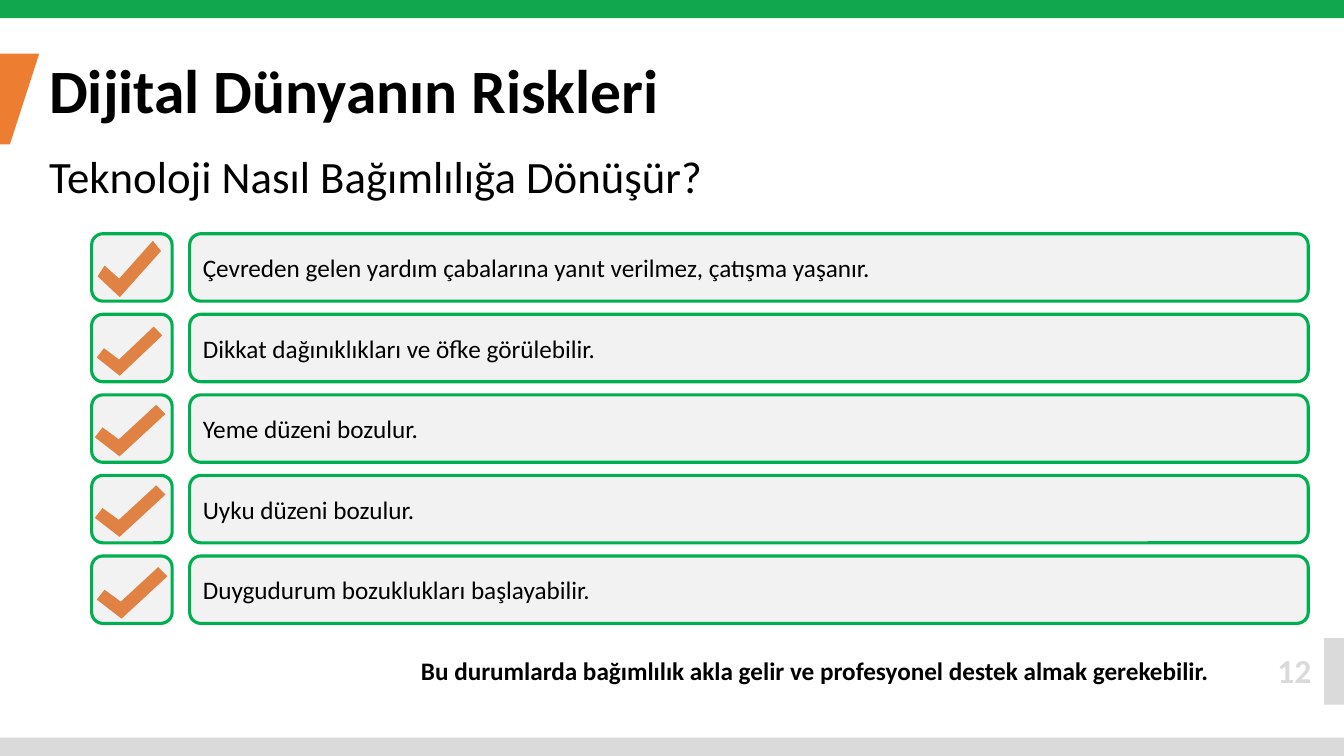
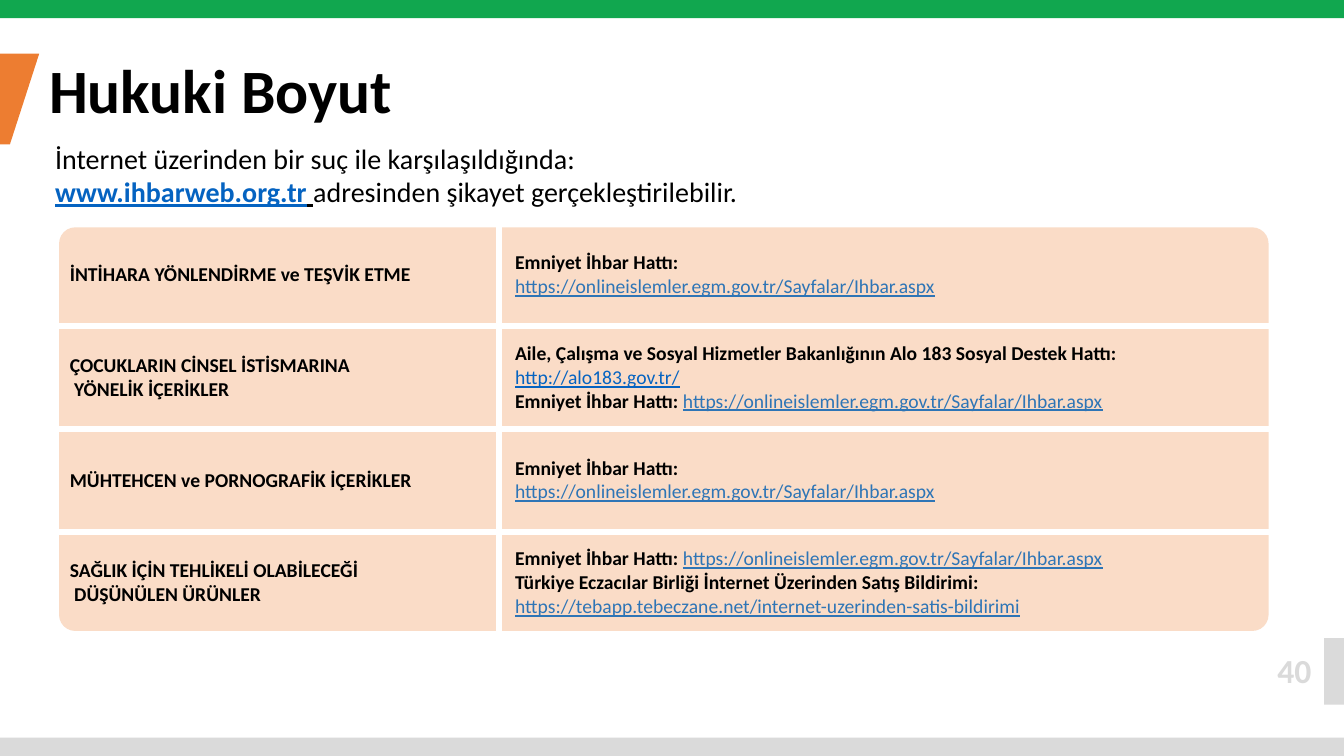
"""Build two slides on digital risks and their legal side."""
import lxml.etree
import pptx
import pptx.dml.color
import pptx.enum.shapes
import pptx.enum.text
import pptx.oxml.ns
import pptx.util

Cm = pptx.util.Cm
Pt = pptx.util.Pt
RGBColor = pptx.dml.color.RGBColor
Shape = pptx.enum.shapes.MSO_SHAPE
Align = pptx.enum.text.PP_ALIGN
Anchor = pptx.enum.text.MSO_ANCHOR
qn = pptx.oxml.ns.qn

BLACK = RGBColor(0x00, 0x00, 0x00)
WHITE = RGBColor(0xFF, 0xFF, 0xFF)
GREEN = RGBColor(0x11, 0xA7, 0x4F)
OUTLINE = RGBColor(0x00, 0xB0, 0x50)
GREY = RGBColor(0xDA, 0xDA, 0xDA)
PALE = RGBColor(0xF2, 0xF2, 0xF2)
ORANGE = RGBColor(0xED, 0x7D, 0x31)
TICK = RGBColor(0xDF, 0x82, 0x44)
PEACH = RGBColor(0xFA, 0xDC, 0xC7)
LINK = RGBColor(0x05, 0x63, 0xC1)
SOFT_LINK = RGBColor(0x2E, 0x75, 0xB6)

FONT = "Calibri"
WIDTH, HEIGHT = 33.87, 19.05
BAND = 0.46
NO_GRID_STYLE = "{2D5ABB26-0587-4C30-8999-92F81FD0307C}"

PLAIN = (BLACK, {})
BOLD = (BLACK, {"bold": True})
BOLD_LINE = (BLACK, {"bold": True, "underline": True})
BOLD_LINK = (LINK, {"bold": True, "underline": True})
STRONG_LINK = (LINK, {"underline": True})
URL = (SOFT_LINK, {"underline": True})
NUMBER = (GREY, {"bold": True})

WEDGE = [(0, 1.35), (0.99, 1.35), (0.25, 3.64), (0, 3.64)]
TICK_OUTLINE = [(0.87, 0), (0.34, 0.67), (0.11, 0.44), (0, 0.63), (0.35, 1), (1, 0.18)]

SIGNS = [
    ("Çevreden gelen yardım çabalarına yanıt verilmez, çatışma yaşanır.", (2.46, 0.18, 1.6, 1.42)),
    ("Dikkat dağınıklıkları ve öfke görülebilir.", (2.44, 0.31, 1.65, 1.24)),
    ("Yeme düzeni bozulur.", (2.39, 0.25, 1.78, 1.3)),
    ("Uyku düzeni bozulur.", (2.39, 0.25, 1.78, 1.3)),
    ("Duygudurum bozuklukları başlayabilir.", (2.44, 0.28, 1.78, 1.3)),
]

POLICE = ("Emniyet İhbar Hattı: ", BOLD)
POLICE_URL = ("https://onlineislemler.egm.gov.tr/Sayfalar/Ihbar.aspx", URL)
POLICE_LINES = [[POLICE], [POLICE_URL]]
REPORTS = [
    (["İNTİHARA YÖNLENDİRME ve TEŞVİK ETME"], POLICE_LINES),
    (
        ["ÇOCUKLARIN CİNSEL İSTİSMARINA", "YÖNELİK İÇERİKLER"],
        [
            [("Aile, Çalışma ve Sosyal Hizmetler Bakanlığının Alo 183 Sosyal Destek Hattı:", BOLD)],
            [("http://alo183.gov.tr/", STRONG_LINK)],
            [POLICE, POLICE_URL],
        ],
    ),
    (["MÜHTEHCEN ve PORNOGRAFİK İÇERİKLER"], POLICE_LINES),
    (
        ["SAĞLIK İÇİN TEHLİKELİ OLABİLECEĞİ", "DÜŞÜNÜLEN ÜRÜNLER"],
        [
            [POLICE, POLICE_URL],
            [("Türkiye Eczacılar Birliği İnternet Üzerinden Satış Bildirimi:", BOLD)],
            [("https://tebapp.tebeczane.net/internet-uzerinden-satis-bildirimi", URL)],
        ],
    ),
]


def apply(target, values):
    """Set each named attribute on the target."""
    for name, value in values.items():
        setattr(target, name, value)


def write(frame, lines, size, align=Align.LEFT):
    """Fill a text frame with one paragraph per line of styled spans."""
    for index, line in enumerate(lines):
        para = frame.add_paragraph() if index else frame.paragraphs[0]
        para.alignment = align
        for text, (color, values) in line:
            span = para.add_run()
            span.text = text
            apply(span.font, {"name": FONT, "size": Pt(size), **values})
            span.font.color.rgb = color


def add_text(page, place, lines, size, align=Align.LEFT):
    """Add a wrapping text box."""
    box = page.shapes.add_textbox(*map(Cm, place))
    box.text_frame.word_wrap = True
    write(box.text_frame, lines, size, align)


def paint(shape, fill, line=None):
    """Give a shape a flat fill and an optional outline."""
    shape.shadow.inherit = False
    shape.fill.solid()
    shape.fill.fore_color.rgb = fill
    if line is None:
        shape.line.fill.background()
    else:
        shape.line.color.rgb = line
        shape.line.width = Pt(2.25)


def add_block(page, kind, place, fill, line=None):
    """Add a painted preset shape."""
    block = page.shapes.add_shape(kind, *map(Cm, place))
    paint(block, fill, line)
    return block


def add_outline(page, points, fill):
    """Add a closed painted polygon."""
    corners = [(Cm(x), Cm(y)) for x, y in points]
    builder = page.shapes.build_freeform(*corners[0])
    builder.add_line_segments(corners[1:], close=True)
    paint(builder.convert_to_shape(), fill)


def add_page(deck, title, number):
    """Add a slide with the shared bands, title and number."""
    page = deck.slides.add_slide(deck.slide_layouts[6])
    add_block(page, Shape.RECTANGLE, (0, 0, WIDTH, BAND), GREEN)
    add_block(page, Shape.RECTANGLE, (0, HEIGHT - BAND, WIDTH, BAND), GREY)
    add_block(page, Shape.RECTANGLE, (WIDTH - 0.5, 16.08, 0.5, 1.68), GREY)
    add_outline(page, WEDGE, ORANGE)
    add_text(page, (0.99, 1.19, 26.39, 2.13), [[(title, BOLD)]], 44)
    add_text(page, (31.78, 16.26, 1.52, 1.27), [[(number, NUMBER)]], 24, Align.RIGHT)
    return page


def add_sign(page, top, text, tick):
    """Add one ticked row."""
    add_block(page, Shape.ROUNDED_RECTANGLE, (2.31, top, 2.03, 1.7), PALE, OUTLINE)
    bar = add_block(page, Shape.ROUNDED_RECTANGLE, (4.78, top, 28.19, 1.7), PALE, OUTLINE)
    bar.text_frame.vertical_anchor = Anchor.MIDDLE
    bar.text_frame.word_wrap = True
    write(bar.text_frame, [[(text, PLAIN)]], 18)
    left, drop, width, height = tick
    points = [(left + x * width, top + drop + y * height) for x, y in TICK_OUTLINE]
    add_outline(page, points, TICK)


def add_border(cell, side):
    """Draw a white rule on one side of a cell."""
    properties = cell._tc.get_or_add_tcPr()
    rule = lxml.etree.SubElement(properties, qn(f"a:{side}"), w=str(Pt(4.95)))
    fill = lxml.etree.SubElement(rule, qn("a:solidFill"))
    lxml.etree.SubElement(fill, qn("a:srgbClr"), val=str(WHITE))


def fill_cell(cell, lines, sides, margin):
    """Write a clear table cell and rule its inner sides."""
    for side in sides:
        add_border(cell, side)
    cell.fill.background()
    apply(cell, {"vertical_anchor": Anchor.MIDDLE, "margin_left": Cm(margin),
                 "margin_right": Cm(0.1), "margin_top": Cm(0), "margin_bottom": Cm(0)})
    write(cell.text_frame, lines, 14)


def add_reports(page):
    """Add the table of reporting lines on its rounded card."""
    card = add_block(page, Shape.ROUNDED_RECTANGLE, (1.49, 5.73, 30.48, 10.17), PEACH)
    card.adjustments[0] = 0.04
    count = len(REPORTS)
    place = (1.4, 5.64, 30.66, 10.34)
    table = page.shapes.add_table(count, 2, *map(Cm, place)).table
    apply(table, {"first_row": False, "horz_banding": False})
    table._tbl.tblPr.find(qn("a:tableStyleId")).text = NO_GRID_STYLE
    for column, width in zip(table.columns, (11.18, 19.48)):
        column.width = Cm(width)
    for index, (topic, lines) in enumerate(REPORTS):
        sides = ["lnT"] * (index > 0) + ["lnB"] * (index < count - 1)
        topic_cell, report_cell = table.rows[index].cells
        fill_cell(topic_cell, [[(text, BOLD)] for text in topic], ["lnR"] + sides, 0.36)
        fill_cell(report_cell, lines, ["lnL"] + sides, 0.4)
        for para in topic_cell.text_frame.paragraphs[1:]:
            para._p.get_or_add_pPr().set("marL", str(Cm(0.11)))


def build_risks(deck):
    """Build the slide on signs of addiction."""
    page = add_page(deck, "Dijital Dünyanın Riskleri", "12")
    add_text(page, (0.99, 3.63, 18.62, 1.63),
             [[("Teknoloji Nasıl Bağımlılığa Dönüşür?", PLAIN)]], 32)
    for index, (text, tick) in enumerate(SIGNS):
        add_sign(page, 5.89 + 2.03 * index, text, tick)
    advice = "Bu durumlarda bağımlılık akla gelir ve profesyonel destek almak gerekebilir."
    add_text(page, (10.36, 16.38, 21.06, 1.02), [[(advice, BOLD)]], 18)


def build_law(deck):
    """Build the slide on reporting online crime."""
    page = add_page(deck, "Hukuki Boyut", "40")
    intro = [
        [("İnternet üzerinden bir suç ile karşılaşıldığında:", PLAIN)],
        [("www.ihbarweb.org.tr", BOLD_LINK), (" ", BOLD_LINE),
         ("adresinden şikayet gerçekleştirilebilir.", PLAIN)],
    ]
    add_text(page, (1.14, 3.43, 23.5, 1.98), intro, 20)
    add_reports(page)


def main():
    """Build and save the deck."""
    deck = pptx.Presentation()
    apply(deck, {"slide_width": Cm(WIDTH), "slide_height": Cm(HEIGHT)})
    build_risks(deck)
    build_law(deck)
    deck.save("out.pptx")


if __name__ == "__main__":
    main()
